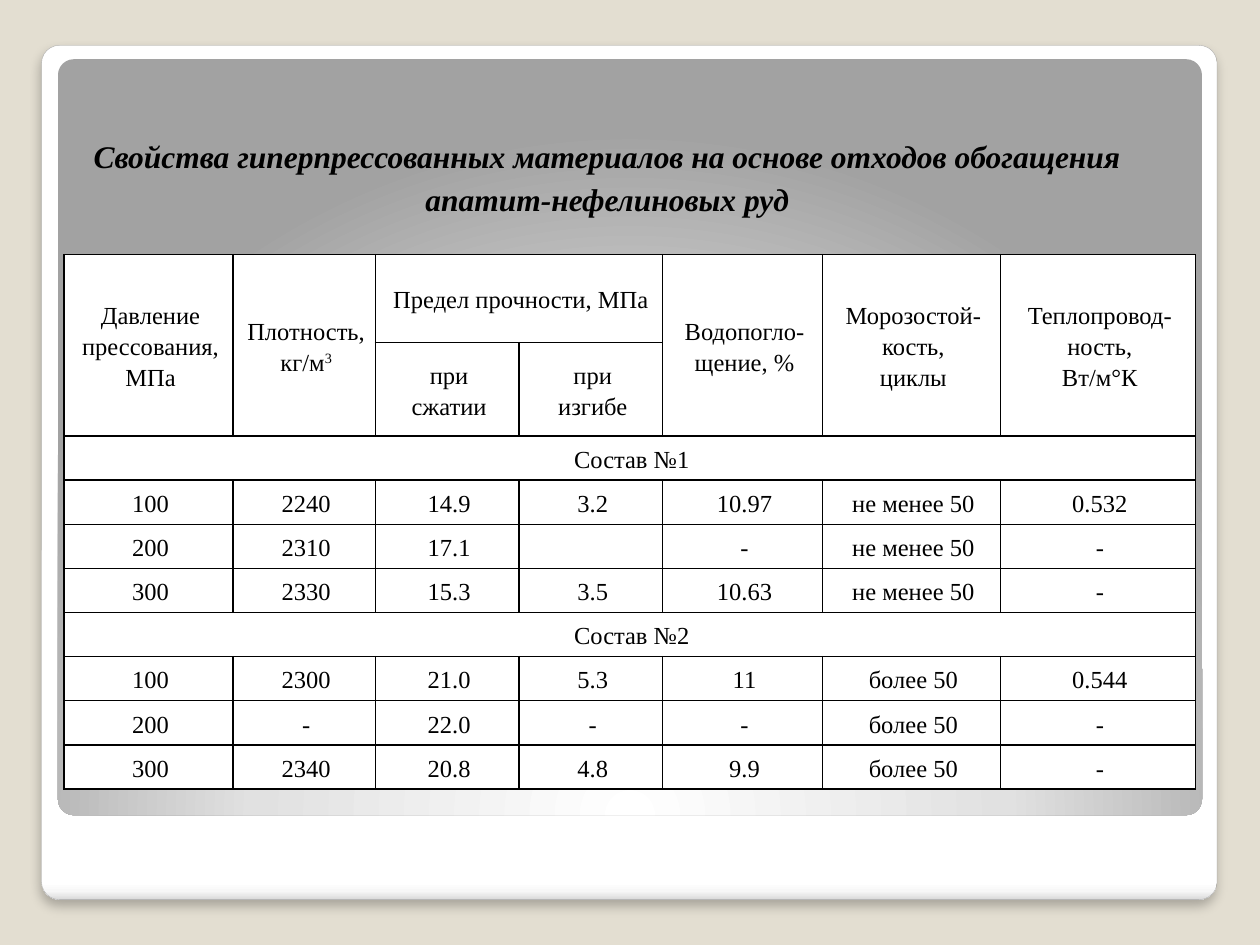
from lxml.etree import SubElement
from pptx import Presentation
from pptx.dml.color import RGBColor
from pptx.enum.shapes import MSO_SHAPE
from pptx.enum.text import MSO_ANCHOR, PP_ALIGN
from pptx.oxml import parse_xml
from pptx.oxml.ns import nsdecls, qn
from pptx.util import Inches, Pt

COLORS = {"page": "E3DED1", "text": "000000", "cell": "FFFFFF", "edge": "A4A4A4"}
FRAME_STOPS = [(0, "FFFFFF"), (98, "FFFFFF"), (99, "F7F7F7"), (100, "DADADA")]
PANEL_STOPS = [(0, "FFFFFF"), (55, "E1E1E1"), (100, "A2A2A2")]
LINEAR = '<a:lin ang="5400000" scaled="0"/>'
RADIAL = ('<a:path path="circle"><a:fillToRect l="50000" t="175000" '
          'r="50000" b="-75000"/></a:path>')
CELL_FONT = {"name": "Times New Roman", "size": Pt(14)}
TITLE_FONT = {"name": "Times New Roman", "size": Pt(18), "bold": True, "italic": True}
CELL_FORMAT = {
    "vertical_anchor": MSO_ANCHOR.MIDDLE,
    "margin_left": Inches(0.1), "margin_right": Inches(0.07),
    "margin_top": 0, "margin_bottom": 0,
}
TITLE = "Свойства гиперпрессованных материалов на основе отходов обогащения апатит-нефелиновых руд"
COLUMNS = [1.34, 1.13, 1.14, 1.14, 1.27, 1.41, 1.55]
ROWS = [0.7, 0.74] + [0.35] * 8
MERGES = [(0, c, 1, c) for c in (0, 1, 4, 5, 6)] + [(0, 2, 0, 3), (2, 0, 2, 6), (6, 0, 6, 6)]
DATA = [
    ["Давление\nпрессования,\nМПа", "Плотность,\nкг/м^3", "Предел прочности, МПа", "",
     "Водопогло-\nщение, %", "Морозостой-\nкость,\nциклы", "Теплопровод-\nность,\nВт/м°К"],
    ["", "", "при\nсжатии", "при\nизгибе", "", "", ""],
    ["Состав №1"],
    ["100", "2240", "14.9", "3.2", "10.97", "не менее 50", "0.532"],
    ["200", "2310", "17.1", "", "-", "не менее 50", "-"],
    ["300", "2330", "15.3", "3.5", "10.63", "не менее 50", "-"],
    ["Состав №2"],
    ["100", "2300", "21.0", "5.3", "11", "более 50", "0.544"],
    ["200", "-", "22.0", "-", "-", "более 50", "-"],
    ["300", "2340", "20.8", "4.8", "9.9", "более 50", "-"],
]


def rgb(name):
    """Return the named colour."""
    return RGBColor.from_string(COLORS[name])


def set_format(target, values):
    """Set each attribute from a dict of format values."""
    for name, value in values.items():
        setattr(target, name, value)


def write_text(tf, text, font):
    """Write centred lines, where a caret starts a superscript."""
    for i, line in enumerate(text.split("\n")):
        p = tf.add_paragraph() if i else tf.paragraphs[0]
        p.alignment, p.line_spacing = PP_ALIGN.CENTER, 1.15
        set_format(p.font, font)
        for j, part in enumerate(line.split("^")):
            if not part:
                continue
            r = p.add_run()
            r.text = part
            set_format(r.font, font)
            r.font.color.rgb = rgb("text")
            if j:
                r.font._element.set("baseline", "30000")


def add_panel(slide, box, stops, direction):
    """Add a rounded panel with a gradient fill."""
    sp = slide.shapes.add_shape(MSO_SHAPE.ROUNDED_RECTANGLE, *map(Inches, box))
    sp.adjustments[0] = 0.021
    sp.shadow.inherit = False
    sp.line.fill.background()
    sp.fill.background()
    marks = "".join(f'<a:gs pos="{pos * 1000}"><a:srgbClr val="{color}"/></a:gs>'
                    for pos, color in stops)
    spPr = sp._element.spPr
    spPr.replace(spPr.find(qn("a:noFill")), parse_xml(
        f'<a:gradFill {nsdecls("a")} rotWithShape="1"><a:gsLst>{marks}</a:gsLst>{direction}</a:gradFill>'))
    return sp


def add_background(slide):
    """Add the page colour, the outer frame and the inner panel."""
    fill = slide.background.fill
    fill.solid()
    fill.fore_color.rgb = rgb("page")
    frame = add_panel(slide, (0.33, 0.36, 9.33, 6.78), FRAME_STOPS, LINEAR)
    frame.line.color.rgb = rgb("edge")
    frame.line.width = Pt(0.16)
    frame._element.spPr.find(qn("a:effectLst")).append(parse_xml(
        f'<a:outerShdw {nsdecls("a")} blurRad="{Pt(6)}" dist="{Pt(4)}" dir="5400000" '
        'algn="tl" rotWithShape="0"><a:srgbClr val="000000"><a:alpha val="25000"/>'
        '</a:srgbClr></a:outerShdw>'))
    add_panel(slide, (0.46, 0.47, 9.08, 6), PANEL_STOPS, RADIAL)


def add_title(slide, box):
    """Add the slide title."""
    tf = slide.shapes.add_textbox(*map(Inches, box)).text_frame
    tf.word_wrap = True
    write_text(tf, TITLE, TITLE_FONT)


def style_cell(cell):
    """Give a cell its margins, fill and borders."""
    set_format(cell, CELL_FORMAT)
    cell.fill.solid()
    cell.fill.fore_color.rgb = rgb("cell")
    tcPr = cell._tc.get_or_add_tcPr()
    for i, side in enumerate("LRTB"):
        ln = SubElement(tcPr, qn(f"a:ln{side}"), w=str(Pt(1)))
        SubElement(SubElement(ln, qn("a:solidFill")), qn("a:srgbClr"), val=COLORS["text"])
        tcPr.insert(i, ln)


def add_properties_table(slide, box):
    """Add the table of material properties."""
    table = slide.shapes.add_table(len(ROWS), len(COLUMNS), *map(Inches, box)).table
    table.first_row = table.horz_banding = False
    for column, width in zip(table.columns, COLUMNS):
        column.width = Inches(width)
    for row, height in zip(table.rows, ROWS):
        row.height = Inches(height)
    for cell in table.iter_cells():
        style_cell(cell)
    for top, left, bottom, right in MERGES:
        table.cell(top, left).merge(table.cell(bottom, right))
    for r, values in enumerate(DATA):
        for c, text in enumerate(values):
            write_text(table.cell(r, c).text_frame, text, CELL_FONT)


def main():
    """Build the slide and save it."""
    prs = Presentation()
    prs.slide_width, prs.slide_height = Inches(10), Inches(7.5)
    slide = prs.slides.add_slide(prs.slide_layouts[6])
    add_background(slide)
    add_properties_table(slide, (0.51, 2.02, sum(COLUMNS), sum(ROWS)))
    add_title(slide, (0.53, 0.99, 8.58, 0.78))
    prs.save("out.pptx")


if __name__ == "__main__":
    main()
